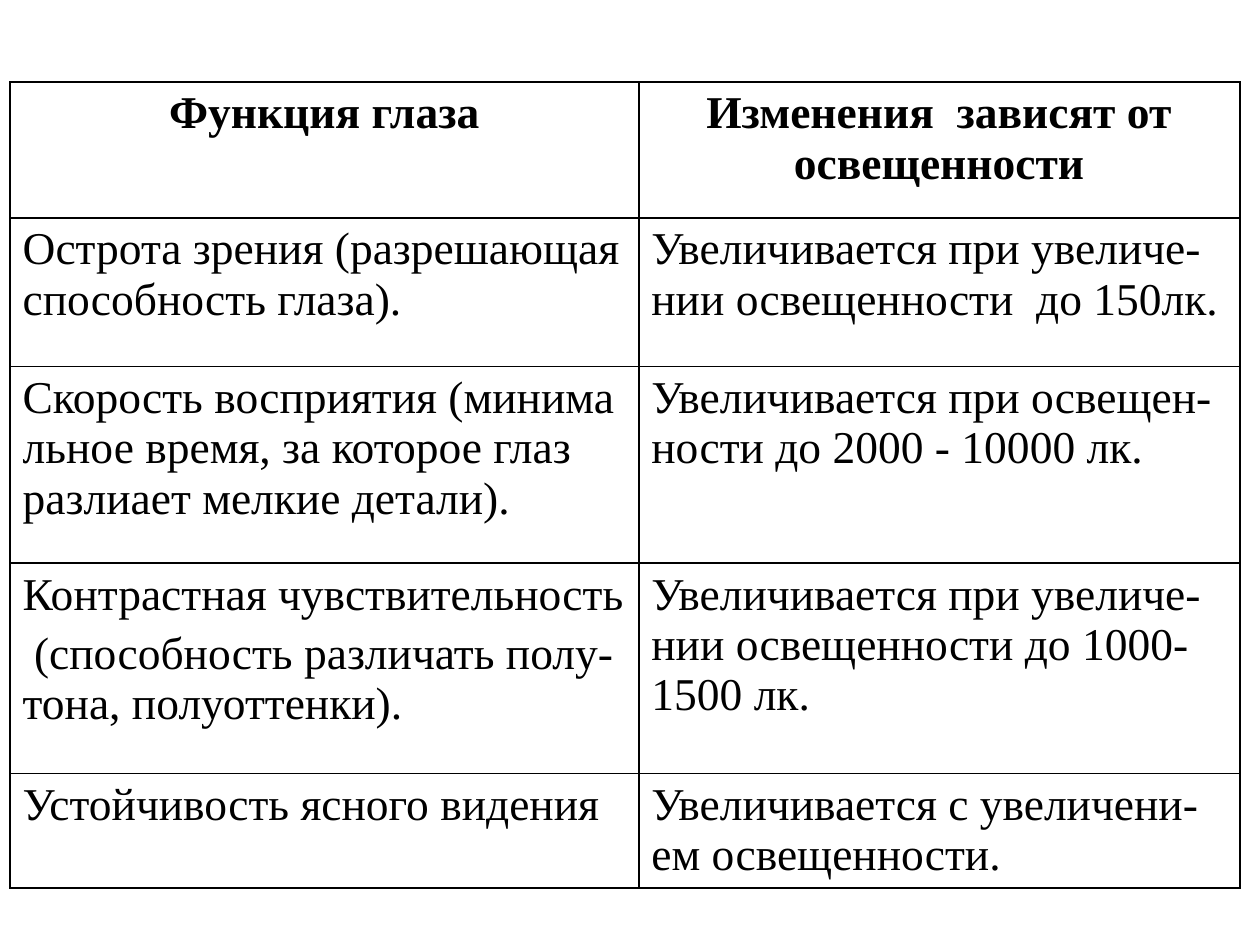
"""Build a slide with a table of eye functions and their dependence on lighting."""
from dataclasses import dataclass

from lxml.etree import SubElement
from pptx import Presentation
from pptx.dml.color import RGBColor
from pptx.enum.text import PP_ALIGN
from pptx.oxml.ns import qn
from pptx.util import Inches, Pt


@dataclass(frozen=True)
class Theme:
    font: str = "Times New Roman"
    size: int = 26
    gap: int = 5
    ink: str = "000000"
    line: int = 1


class Deck:
    def __init__(self, theme, width, height):
        self.theme = theme
        self.show = Presentation()
        self.show.slide_width = Inches(width)
        self.show.slide_height = Inches(height)
        self.slide = self.show.slides.add_slide(self.show.slide_layouts[6])

    def table(self, left, top, widths, heights, rows):
        frame = self.slide.shapes.add_table(
            len(rows), len(widths), Inches(left), Inches(top),
            Inches(sum(widths)), Inches(sum(heights)))
        table = frame.table
        table.horz_banding = False
        for column, width in zip(table.columns, widths):
            column.width = Inches(width)
        for row, height in zip(table.rows, heights):
            row.height = Inches(height)
        for r, texts in enumerate(rows):
            for c, text in enumerate(texts):
                self.cell(table.cell(r, c), text, r == 0)

    def cell(self, cell, text, head):
        self.border(cell)
        cell.fill.background()
        cell.text_frame.text = text
        for para in cell.text_frame.paragraphs:
            para.alignment = PP_ALIGN.CENTER if head else PP_ALIGN.LEFT
            para.space_before = Pt(self.theme.gap)
            para.font.name = self.theme.font
            para.font.size = Pt(self.theme.size)
            para.font.bold = head
            para.font.color.rgb = RGBColor.from_string(self.theme.ink)

    def border(self, cell):
        props = cell._tc.get_or_add_tcPr()
        for side in "LRTB":
            line = SubElement(props, qn(f"a:ln{side}"), w=str(Pt(self.theme.line)))
            fill = SubElement(line, qn("a:solidFill"))
            SubElement(fill, qn("a:srgbClr"), val=self.theme.ink)


ROWS = [
    ("Функция глаза", "Изменения  зависят от освещенности"),
    ("Острота зрения (разрешающая способность глаза).",
     "Увеличивается при увеличе-нии освещенности  до 150лк."),
    ("Скорость восприятия (минима льное время, за которое глаз "
     "разлиает мелкие детали).",
     "Увеличивается при освещен-ности до 2000 - 10000 лк."),
    ("Контрастная чувствительность\n"
     " (способность различать полу-тона, полуоттенки).",
     "Увеличивается при увеличе-нии освещенности до 1000-1500 лк."),
    ("Устойчивость ясного видения",
     "Увеличивается с увеличени-ем освещенности."),
]


def main():
    deck = Deck(Theme(), 10, 7.5)
    deck.table(0.08, 0.65, [4.99, 4.77], [1.08, 1.18, 1.56, 1.67, 0.91], ROWS)
    deck.show.save("out.pptx")


if __name__ == "__main__":
    main()
